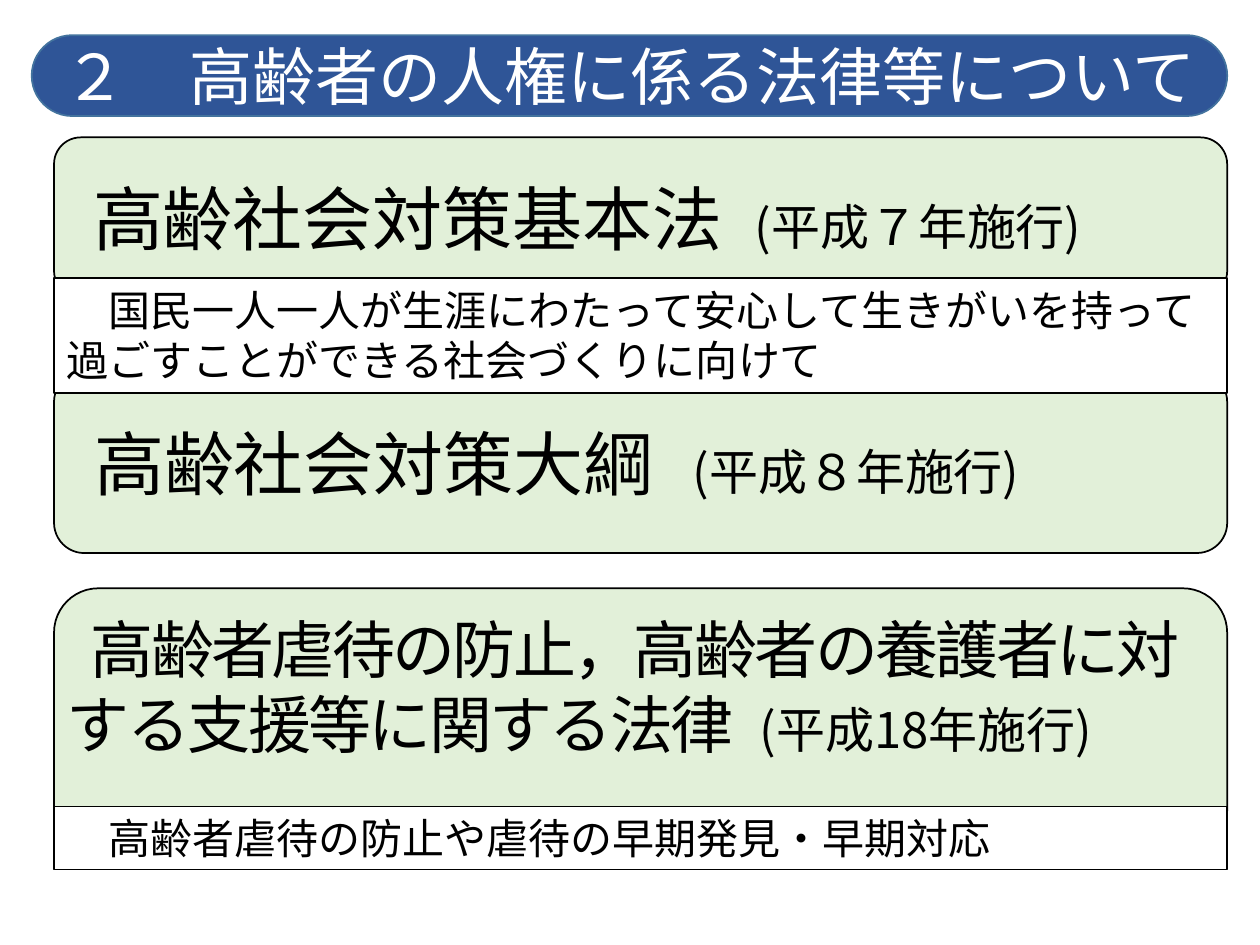
"""Build a slide on the laws that protect the rights of older people."""
import pptx
import pptx.dml.color
import pptx.enum.shapes
import pptx.enum.text
import pptx.oxml
import pptx.oxml.ns
import pptx.util

Cm = pptx.util.Cm
Pt = pptx.util.Pt
SHAPES = pptx.enum.shapes.MSO_SHAPE
ALIGN = pptx.enum.text.PP_ALIGN
ANCHOR = pptx.enum.text.MSO_ANCHOR

FONT = "Noto Sans CJK JP"
COLORS = {
    "navy": "2F5597",
    "edge": "43739E",
    "green": "E2F0D9",
    "white": "FFFFFF",
    "black": "000000",
}
LEFT, WIDTH = 1.09, 23.65


def color(name):
    return pptx.dml.color.RGBColor.from_string(COLORS[name])


def add_box(page, kind, left, top, width, height, fill, line="black"):
    box = page.shapes.add_shape(kind, Cm(left), Cm(top), Cm(width), Cm(height))
    box.shadow.inherit = False
    box.fill.solid()
    box.fill.fore_color.rgb = color(fill)
    box.line.color.rgb = color(line)
    box.line.width = Pt(1)
    box.text_frame.word_wrap = True
    box.text_frame.vertical_anchor = ANCHOR.MIDDLE
    box.text_frame.paragraphs[0].alignment = ALIGN.LEFT
    return box


def add_span(para, text, size, ink="black", spacing=0):
    span = para.add_run()
    span.text = text
    span.font.size = Pt(size)
    span.font.name = FONT
    span.font.color.rgb = color(ink)
    properties = span.font._element
    if spacing:
        properties.set("spc", str(round(spacing * 100)))
    east_asian = pptx.oxml.parse_xml(
        f'<a:ea {pptx.oxml.ns.nsdecls("a")} typeface="{FONT}"/>')
    properties.find(pptx.oxml.ns.qn("a:latin")).addnext(east_asian)


def set_indent_and_tab(para, indent, tab):
    properties = para._p.get_or_add_pPr()
    properties.set("indent", str(Cm(indent)))
    properties.append(pptx.oxml.parse_xml(
        f'<a:tabLst {pptx.oxml.ns.nsdecls("a")}>'
        f'<a:tab pos="{Cm(tab)}" algn="l"/></a:tabLst>'))


def add_title(page, text):
    box = add_box(page, SHAPES.ROUNDED_RECTANGLE, 0.64, 0.71, 24.1, 1.63, "navy", "edge")
    box.adjustments[0] = 0.5
    para = box.text_frame.paragraphs[0]
    para.alignment = ALIGN.CENTER
    add_span(para, text, 36, "white")


def add_law(page, top, height, name, year, tab, size=40, indent=0.63, spacing=0, bottom=0):
    box = add_box(page, SHAPES.ROUNDED_RECTANGLE, LEFT, top, WIDTH, height, "green")
    frame = box.text_frame
    frame.margin_left = frame.margin_right = frame.margin_top = 0
    frame.margin_bottom = Cm(bottom)
    para = frame.paragraphs[0]
    set_indent_and_tab(para, indent, tab)
    add_span(para, name + "\t", size, spacing=spacing)
    add_span(para, year, 28)


def add_purpose(page, top, height, text):
    box = add_box(page, SHAPES.RECTANGLE, LEFT, top, WIDTH, height, "white")
    box.text_frame.vertical_anchor = ANCHOR.TOP
    box.text_frame.auto_size = pptx.enum.text.MSO_AUTO_SIZE.SHAPE_TO_FIT_TEXT
    add_span(box.text_frame.paragraphs[0], text, 24)


def main():
    deck = pptx.Presentation()
    deck.slide_width, deck.slide_height = Cm(25.4), Cm(19.05)
    page = deck.slides.add_slide(deck.slide_layouts[6])
    add_title(page, "２　高齢者の人権に係る法律等について")
    add_law(page, 2.77, 3.23, "高齢社会対策基本法", "(平成７年施行)", 15.05)
    add_law(page, 7.49, 3.66, "高齢社会対策大綱", "(平成８年施行)", 14.27)
    add_law(page, 11.86, 5.36, "高齢者虐待の防止，高齢者の養護者に対する支援等に関する法律",
            "(平成18年施行)", 14.68, size=36, indent=0.48, spacing=-1.5, bottom=1.43)
    add_purpose(page, 5.61, 2.31,
                "　国民一人一人が生涯にわたって安心して生きがいを持って過ごすことができる社会づくりに向けて")
    add_purpose(page, 16.26, 1.27, "　高齢者虐待の防止や虐待の早期発見・早期対応")
    deck.save("out.pptx")


if __name__ == "__main__":
    main()
